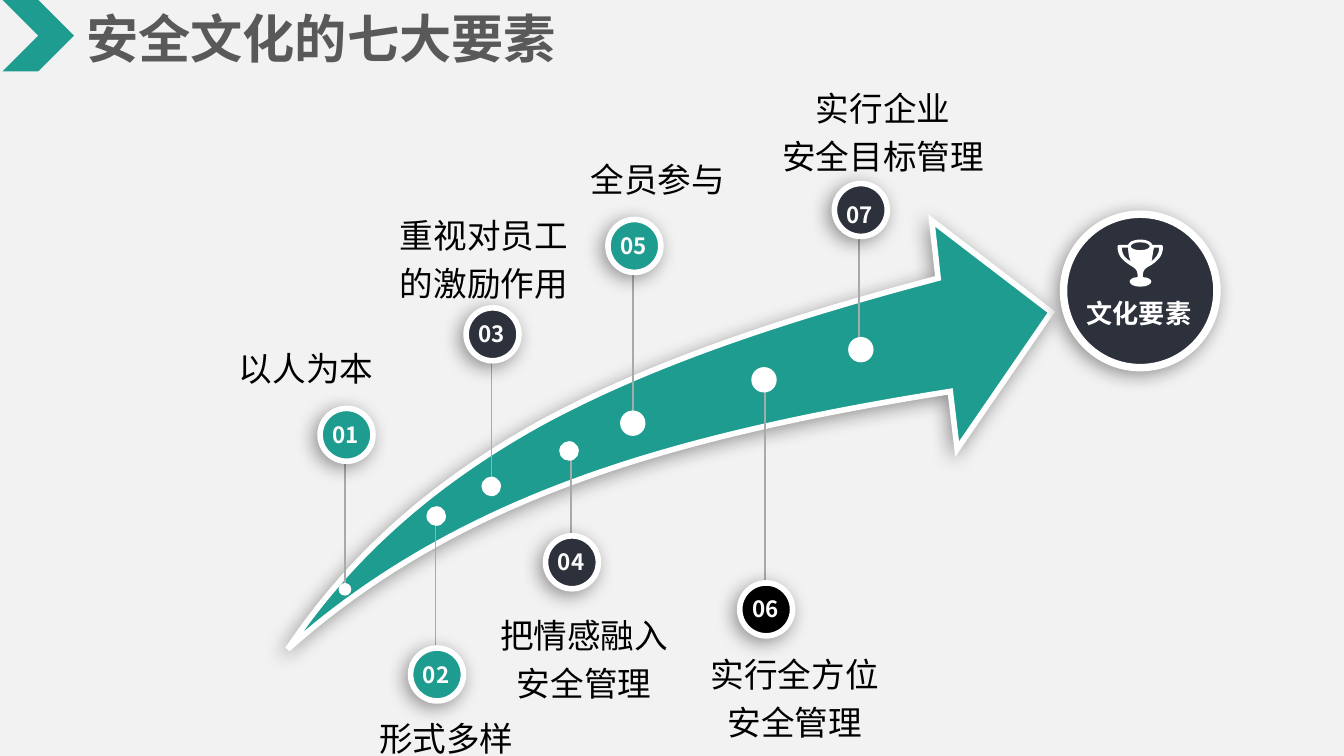
import pptx
import pptx.util
import pptx.dml.color
import pptx.enum.shapes
import pptx.enum.text
import pptx.oxml
import pptx.oxml.ns

Cm = pptx.util.Cm
Pt = pptx.util.Pt
SHAPE = pptx.enum.shapes.MSO_SHAPE
ALIGN = pptx.enum.text.PP_ALIGN
ANCHOR = pptx.enum.text.MSO_ANCHOR
FIT = pptx.enum.text.MSO_AUTO_SIZE
NS = pptx.oxml.ns.nsdecls("a")
FONT = "Noto Sans CJK SC"
COLORS = {
    "back": "F2F2F2", "teal": "1E9C90", "navy": "2D313B", "black": "000000",
    "white": "FFFFFF", "number": "FCFCFC", "stem": "A6AAA9", "title": "595959",
}
BUBBLE = 1

ARROW = [[
    (0, 8.1), (1.17, 6.35, 2.72, 4.98, 4.72, 3.86),
    (6.76, 2.74, 9.3, 1.88, 12.29, 1.09), (12.17, 0), (14.43, 1.73),
    (12.65, 4.32), (12.52, 3.23), (9.8, 3.66, 7.39, 4.19, 5.36, 4.95),
    (3.28, 5.72, 1.5, 6.76, 0, 8.1),
]]
TROPHY = [
    [(0.08, 0.15), (0.2, 0.15), (0.2, 0.28, 0.23, 0.36, 0.25, 0.41),
     (0.15, 0.36, 0.08, 0.28, 0.08, 0.15)],
    [(0.43, 0.05), (0.56, 0.05, 0.61, 0.1, 0.61, 0.13),
     (0.61, 0.15, 0.56, 0.2, 0.43, 0.2), (0.3, 0.2, 0.25, 0.15, 0.25, 0.13),
     (0.25, 0.1, 0.3, 0.05, 0.43, 0.05)],
    [(0.64, 0.41), (0.66, 0.36, 0.66, 0.28, 0.69, 0.15), (0.79, 0.15),
     (0.79, 0.28, 0.71, 0.36, 0.64, 0.41)],
    [(0.48, 0.66), (0.48, 0.58, 0.53, 0.53, 0.64, 0.48),
     (0.74, 0.41, 0.86, 0.33, 0.86, 0.13), (0.86, 0.1, 0.84, 0.1, 0.84, 0.1),
     (0.66, 0.1), (0.64, 0.05, 0.58, 0, 0.43, 0),
     (0.28, 0, 0.22, 0.05, 0.2, 0.1), (0.03, 0.1),
     (0.03, 0.1, 0, 0.1, 0, 0.13), (0, 0.33, 0.13, 0.41, 0.23, 0.48),
     (0.33, 0.53, 0.38, 0.58, 0.38, 0.66), (0.38, 0.71),
     (0.28, 0.71, 0.23, 0.76, 0.23, 0.79), (0.23, 0.84, 0.3, 0.89, 0.43, 0.89),
     (0.56, 0.89, 0.64, 0.84, 0.64, 0.79), (0.64, 0.76, 0.58, 0.71, 0.48, 0.71),
     (0.48, 0.71, 0.48, 0.66, 0.48, 0.66)],
]
MARKERS = [
    ("01", "teal", (6.05, 7.72), (0.47, 3.4, 0.51), (0.35, 3.3, 0.24), 0.18),
    ("03", "navy", (8.81, 5.82), (0.48, 3.38, 0.58), (0.29, 3.19, 0.37), 0.18),
    ("05", "teal", (11.49, 4.15), (0.47, 3.76, 0.94), (0.23, 3.61, 0.48), 0.18),
    ("07", "navy", (15.77, 3.47), (0.46, 3.12, 0.91), (0.26, 2.9, 0.48), 0.28),
    ("02", "teal", (7.76, 12.25), (0.47, 0.46, -2.39), (0.3, -2.68, 0.37), 0.18),
    ("06", "black", (13.98, 11.02), (0.47, -0.05, -3.61), (0.22, -4.08, 0.48), 0.18),
    ("04", "navy", (10.31, 10.13), (0.48, 1.04, -1.57), (0.26, -1.79, 0.37), 0.18),
]
LABELS = [
    ("重视对员工\n的激励作用", (7.19, 3.78, 3.91, 2.03)),
    ("形式多样", (6.76, 13.29, 3.35, 1.09)),
    ("以人为本", (4.11, 6.3, 3.35, 1.09)),
    ("全员参与", (10.76, 2.72, 3.35, 1.09)),
    ("实行全方位\n安全管理", (12.95, 12.08, 4.14, 2.11)),
    ("实行企业\n安全目标管理", (14.44, 1.38, 4.5, 2.11)),
    ("把情感融入\n安全管理", (9.02, 11.34, 4.04, 2.11)),
]


def rgb(name):
    return pptx.dml.color.RGBColor.from_string(COLORS[name])


def style(sp, fill, border=0):
    sp.shadow.inherit = False
    sp.fill.solid()
    sp.fill.fore_color.rgb = rgb(fill)
    if not border:
        sp.line.fill.background()
        return
    sp.line.color.rgb = rgb("white")
    sp.line.width = Pt(border)
    sp.line._get_or_add_ln().append(pptx.oxml.parse_xml(f'<a:miter {NS} lim="800000"/>'))
    effects = sp._element.spPr.find(pptx.oxml.ns.qn("a:effectLst"))
    effects.append(pptx.oxml.parse_xml(
        f'<a:outerShdw {NS} blurRad="127000" dist="38100" dir="8100000" algn="ctr" '
        'rotWithShape="0"><a:srgbClr val="000000"><a:alpha val="40000"/>'
        '</a:srgbClr></a:outerShdw>'))


def add_text(s, box, text, size, color, bold=False, align=ALIGN.CENTER, spacing=None):
    tf = s.shapes.add_textbox(*map(Cm, box)).text_frame
    tf.text = text
    tf.word_wrap = True
    for p in tf.paragraphs:
        p.alignment = align
        p.line_spacing = spacing
        for r in p.runs:
            r.font.name = FONT
            r.font.size = Pt(size)
            r.font.bold = bold
            r.font.color.rgb = rgb(color)
            r.font._element.append(pptx.oxml.parse_xml(f'<a:ea {NS} typeface="{FONT}"/>'))
    return tf


def add_badge_text(s, box, text, size, color, spacing):
    tf = add_text(s, box, text, size, color, True, spacing=spacing)
    tf.margin_left = tf.margin_right = tf.margin_top = tf.margin_bottom = 0
    tf.vertical_anchor = ANCHOR.MIDDLE
    tf.paragraphs[0].space_before = Pt(10)


def add_circle(s, x, y, d):
    return s.shapes.add_shape(SHAPE.OVAL, Cm(x), Cm(y), Cm(d), Cm(d))


def add_outline(s, x, y, contours):
    builder = None
    for contour in contours:
        first, *rest = [(Cm(x + part[-2]), Cm(y + part[-1])) for part in contour]
        if builder is None:
            builder = s.shapes.build_freeform(*first)
        else:
            builder.move_to(*first)
        builder.add_line_segments(rest, close=contour[0] != contour[-1][-2:])
    sp = builder.convert_to_shape()
    segments = sp._element.findall(".//" + pptx.oxml.ns.qn("a:lnTo"))
    parts = [part for contour in contours for part in contour[1:]]
    for segment, part in zip(segments, parts):
        if len(part) == 6:
            points = "".join(f'<a:pt x="{Cm(part[i])}" y="{Cm(part[i + 1])}"/>' for i in (0, 2, 4))
            curve = pptx.oxml.parse_xml(f'<a:cubicBezTo {NS}>{points}</a:cubicBezTo>')
            segment.getparent().replace(segment, curve)
    return sp


def add_marker(s, number, color, bubble, stem, dot, text_top):
    group = s.shapes.add_group_shape()
    x, y = bubble
    dx, start, end = stem
    line = group.shapes.add_connector(pptx.enum.shapes.MSO_CONNECTOR.STRAIGHT,
                                      Cm(x + dx), Cm(y + start), Cm(x + dx), Cm(y + end))
    line.line.color.rgb = rgb("stem")
    line.line.width = Pt(1)
    line._element.spPr.append(pptx.oxml.parse_xml(f'<a:effectLst {NS}/>'))
    style(add_circle(group, x, y, BUBBLE), color, 3)
    style(add_circle(group, x + dot[0], y + dot[1], dot[2]), "white")
    add_badge_text(group, (x + 0.22, y + text_top, 0.53, 0.64), number, 12, "number", Pt(14))


def add_goal(s, x, y, d):
    style(add_circle(s, x, y, d), "navy", 4)
    style(add_outline(s, x + 1.02, y + 0.48, TROPHY), "white")
    add_badge_text(s, (x + 0.36, y + 1.48, 2.13, 0.86), "文化要素", 14, "white", 0.9)


def add_title(s, x, y, size):
    tf = add_text(s, (x + 1.33, y, 9.5, 1.45), "安全文化的七大要素", 28, "title", True, ALIGN.LEFT)
    tf.word_wrap = False
    tf.auto_size = FIT.SHAPE_TO_FIT_TEXT
    style(s.shapes.add_shape(SHAPE.CHEVRON, Cm(x), Cm(y), Cm(size), Cm(size)), "teal")


def add_label(s, text, box):
    tf = add_text(s, box, text, 18, "black", spacing=1.2)
    tf.auto_size = FIT.SHAPE_TO_FIT_TEXT


def main():
    prs = pptx.Presentation()
    prs.slide_width, prs.slide_height = Cm(25.4), Cm(14.29)
    s = prs.slides.add_slide(prs.slide_layouts[6])
    s.background.fill.solid()
    s.background.fill.fore_color.rgb = rgb("back")
    style(add_outline(s, 5.44, 4.17, ARROW), "teal", 3)
    for marker in MARKERS:
        add_marker(s, *marker)
    add_goal(s, 20.1, 4.05, 2.9)
    add_title(s, 0.05, 0, 1.35)
    for text, box in LABELS:
        add_label(s, text, box)
    prs.save("out.pptx")


if __name__ == "__main__":
    main()
